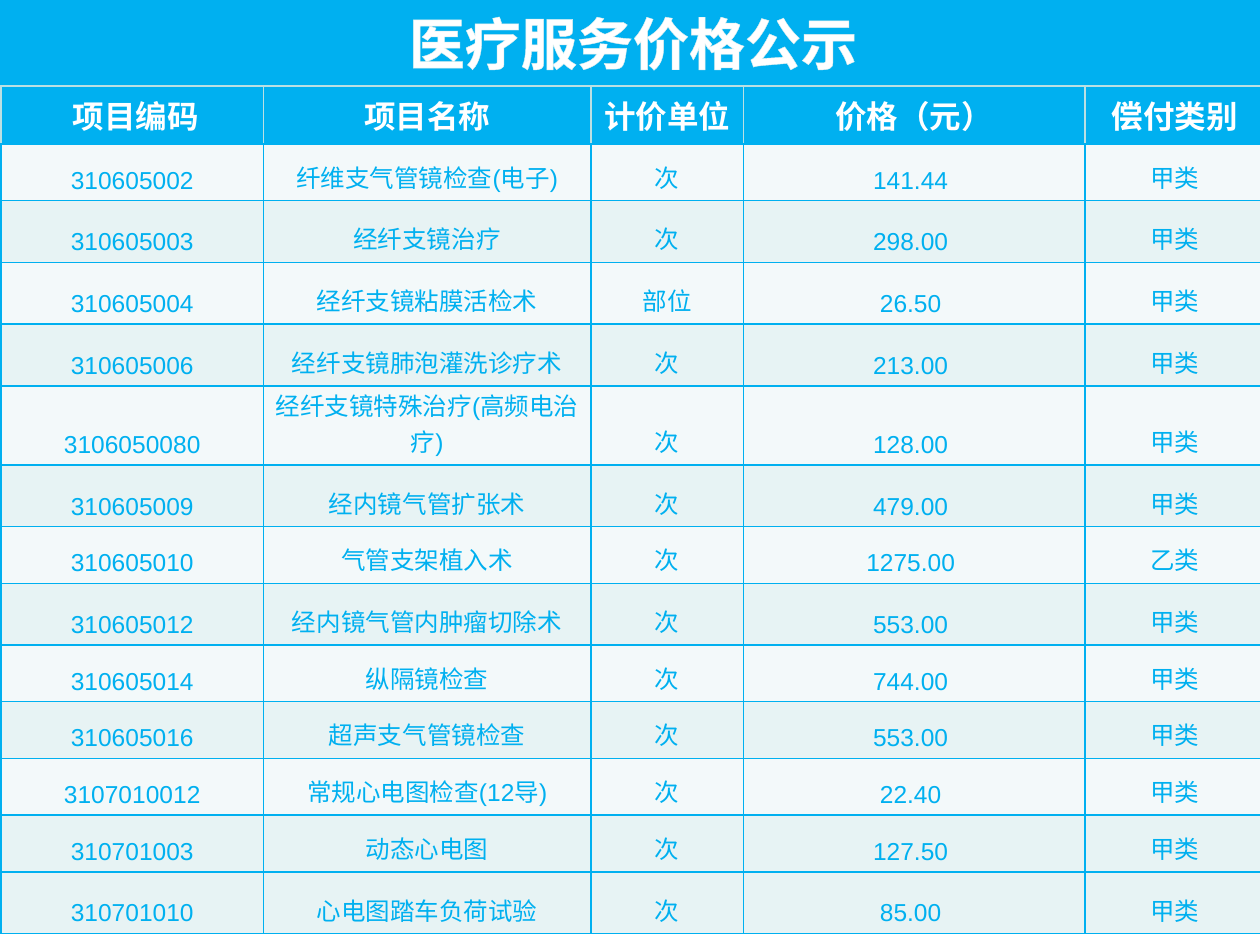
"""Build a slide with a price list of medical services."""
from lxml import etree
from pptx import Presentation
from pptx.dml.color import RGBColor
from pptx.enum import text as t
from pptx.oxml import ns
from pptx.util import Inches, Pt

BLUE = RGBColor(0x00, 0xB0, 0xF0)
TEAL = RGBColor(0xBB, 0xE0, 0xE3)
PALE = RGBColor(0xD9, 0xED, 0xEE)
LIGHT = RGBColor(0xF3, 0xF9, 0xFA)
DARK = RGBColor(0xE7, 0xF3, 0xF4)
WHITE = RGBColor(0xFF, 0xFF, 0xFF)

TITLE = "医疗服务价格公示"
HEADS = (" 项目编码", "项目名称", "计价单位", "价格（元）", "偿付类别")
ITEMS = [
    ("310605002", "纤维支气管镜检查(电子)", "次", "141.44 ", "甲类"),
    ("310605003", "经纤支镜治疗", "次", "298.00 ", "甲类"),
    ("310605004", "经纤支镜粘膜活检术", "部位", "26.50 ", "甲类"),
    ("310605006", "经纤支镜肺泡灌洗诊疗术", "次", "213.00 ", "甲类"),
    ("3106050080", "经纤支镜特殊治疗(高频电治疗)", "次", "128.00 ", "甲类"),
    ("310605009", "经内镜气管扩张术", "次", "479.00 ", "甲类"),
    ("310605010", "气管支架植入术", "次", "1275.00 ", "乙类"),
    ("310605012", "经内镜气管内肿瘤切除术", "次", "553.00 ", "甲类"),
    ("310605014", "纵隔镜检查", "次", "744.00 ", "甲类"),
    ("310605016", "超声支气管镜检查", "次", "553.00 ", "甲类"),
    ("3107010012", "常规心电图检查(12导)", "次", "22.40 ", "甲类"),
    ("310701003", "动态心电图", "次", "127.50 ", "甲类"),
    ("310701010", "心电图踏车负荷试验", "次", "85.00 ", "甲类"),
]
WIDTHS = (2.08, 2.6, 1.21, 2.71, 1.43)
HEIGHTS = (0.66, 0.45, 0.45, 0.49, 0.49, 0.49, 0.59, 0.49,
           0.45, 0.49, 0.45, 0.45, 0.45, 0.45, 0.49)


def add_line(props, tag, color, width):
    line = etree.SubElement(props, ns.qn(tag), w=str(Pt(width)))
    fill = etree.SubElement(line, ns.qn("a:solidFill"))
    etree.SubElement(fill, ns.qn("a:srgbClr"), val=str(color))
    return line


def write(cell, words, size=14, color=BLUE, bold=False, anchor=t.MSO_ANCHOR.BOTTOM,
          space=None, edge=None):
    cell.vertical_anchor = anchor
    para = cell.text_frame.paragraphs[0]
    para.alignment = t.PP_ALIGN.CENTER
    if space:
        para.line_spacing = space
    run = para.add_run()
    run.text = words
    font = run.font
    if edge:
        add_line(run._r.get_or_add_rPr(), "a:ln", edge, 0.8)
    font.name, font.size, font.bold = "Arial", Pt(size), bold
    font.color.rgb = color


def style(cell, fill, **sides):
    props = cell._tc.get_or_add_tcPr()
    for side in "LRTB":
        add_line(props, f"a:ln{side}", sides.get(side, BLUE), 1)
    cell.fill.solid()
    cell.fill.fore_color.rgb = fill


def main():
    deck = Presentation()
    deck.slide_width, deck.slide_height = Inches(10), Inches(7.5)
    slide = deck.slides.add_slide(deck.slide_layouts[6])
    table = slide.shapes.add_table(
        len(HEIGHTS), len(WIDTHS), Inches(0.01), 0,
        Inches(sum(WIDTHS)), Inches(sum(HEIGHTS))).table
    table.first_row = table.horz_banding = False
    for col, width in zip(table.columns, WIDTHS):
        col.width = Inches(width)
    for row, height in zip(table.rows, HEIGHTS):
        row.height = Inches(height)

    for cell in table.rows[0].cells:
        style(cell, BLUE, B=TEAL)
    first = table.cell(0, 0)
    first.merge(table.cell(0, len(WIDTHS) - 1))
    write(first, TITLE, size=32, color=WHITE, bold=True,
          anchor=t.MSO_ANCHOR.MIDDLE, space=0.9, edge=PALE)

    for cell, head in zip(table.rows[1].cells, HEADS):
        style(cell, BLUE, L=TEAL, R=TEAL, T=TEAL)
        write(cell, head, size=18, color=WHITE, bold=True, anchor=t.MSO_ANCHOR.TOP)

    last = len(ITEMS) - 1
    for i, item in enumerate(ITEMS):
        fill = DARK if i % 2 or i == last else LIGHT
        for cell, words in zip(table.rows[i + 2].cells, item):
            style(cell, fill)
            cell.margin_left = cell.margin_right = cell.margin_top = Inches(0.01)
            cell.margin_bottom = Inches(0.05)
            write(cell, words)

    deck.save("out.pptx")


if __name__ == "__main__":
    main()
